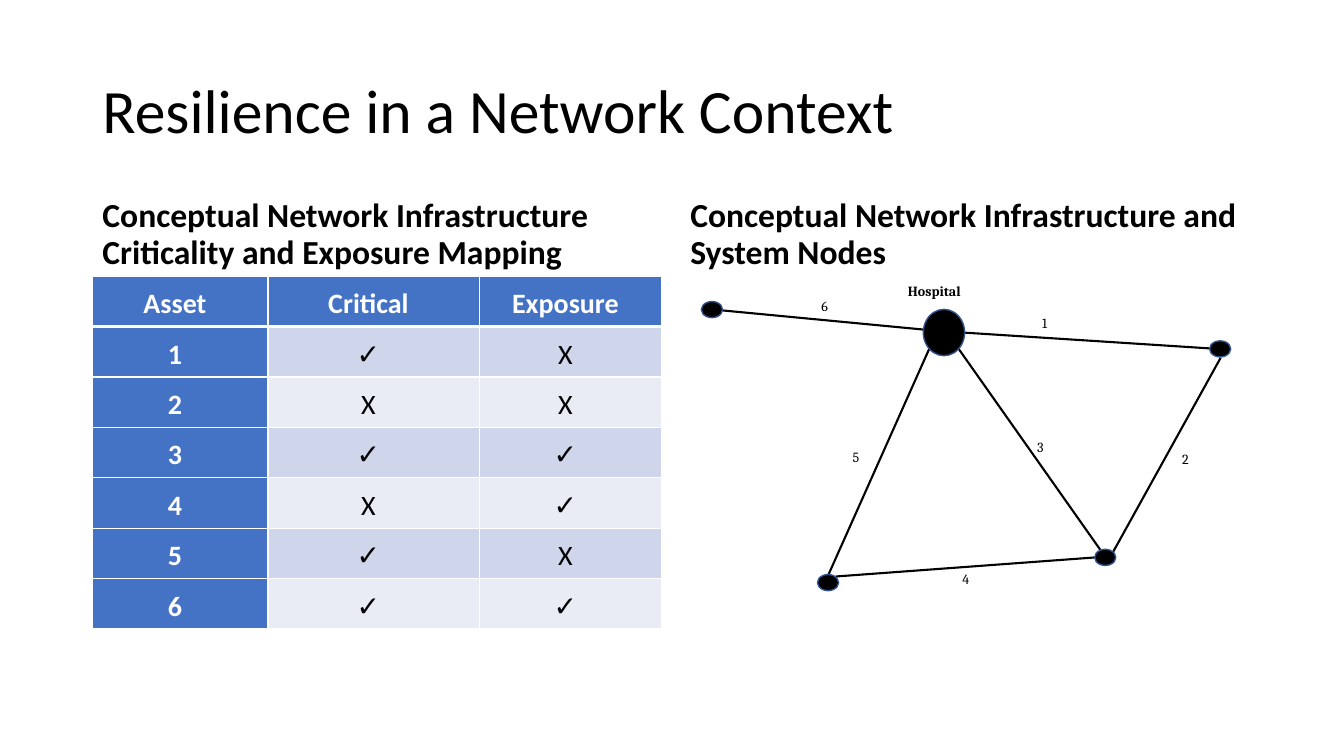
from dataclasses import dataclass

from lxml import etree
from pptx import Presentation
from pptx.dml.color import RGBColor
from pptx.enum.shapes import MSO_CONNECTOR, MSO_SHAPE
from pptx.enum.text import MSO_ANCHOR, PP_ALIGN
from pptx.oxml.ns import qn
from pptx.util import Pt

STRAIGHT = MSO_CONNECTOR.STRAIGHT
OVAL = MSO_SHAPE.OVAL
TOP, MIDDLE, BOTTOM = MSO_ANCHOR.TOP, MSO_ANCHOR.MIDDLE, MSO_ANCHOR.BOTTOM
CENTER = PP_ALIGN.CENTER


@dataclass(frozen=True)
class Theme:
    """Colours, fonts and type sizes of the slide."""
    ink: str = "000000"
    white: str = "FFFFFF"
    accent: str = "4472C4"
    outline: str = "325491"
    bands: tuple = ("CFD5EA", "E9EBF5")
    font: str = "Calibri"
    label_font: str = "Cambria"
    title: int = 44
    heading: int = 24
    cell: int = 20
    label: int = 10


class Deck:
    """Draws styled elements on the current slide."""

    def __init__(self, prs, theme):
        self.theme = theme
        self.s = prs.slides.add_slide(prs.slide_layouts[6])

    def run(self, p, text, size, bold=False, color=None, font=None):
        """Add one formatted run to a paragraph."""
        r = p.add_run()
        r.text = text
        r.font.size = Pt(size)
        r.font.bold = bold
        r.font.name = font or self.theme.font
        r.font.color.rgb = RGBColor.from_string(color or self.theme.ink)

    def text(self, box, text, size, bold=False, font=None, anchor=TOP,
             spacing=1.0, before=0):
        """Add a wrapped text box."""
        tf = self.s.shapes.add_textbox(*map(Pt, box)).text_frame
        tf.word_wrap = True
        tf.vertical_anchor = anchor
        p = tf.paragraphs[0]
        p.line_spacing = spacing
        p.space_before = Pt(before)
        self.run(p, text, size, bold, font=font)

    def label(self, x, y, text, width=26.6, bold=False):
        """Add a small diagram label."""
        self.text((x, y, width, 23.8), text, self.theme.label, bold,
                  self.theme.label_font)

    def line(self, start, end):
        """Add a straight network link."""
        sp = self.s.shapes.add_connector(STRAIGHT, *map(Pt, start + end))
        sp.line.width = Pt(1.5)
        sp.line.color.rgb = RGBColor.from_string(self.theme.ink)
        etree.SubElement(sp._element.spPr, qn("a:effectLst"))

    def node(self, x, y, w=15.1, h=11.5):
        """Add an elliptical network node."""
        sp = self.s.shapes.add_shape(OVAL, *map(Pt, (x, y, w, h)))
        sp.shadow.inherit = False
        sp.fill.solid()
        sp.fill.fore_color.rgb = RGBColor.from_string(self.theme.ink)
        sp.line.width = Pt(1)
        sp.line.color.rgb = RGBColor.from_string(self.theme.outline)

    def border(self, cell, side, width):
        """Add a white border to one side of a cell."""
        ln = etree.SubElement(cell._tc.get_or_add_tcPr(), qn(f"a:ln{side}"),
                              w=str(Pt(width)))
        fill = etree.SubElement(ln, qn("a:solidFill"))
        etree.SubElement(fill, qn("a:srgbClr"), val=self.theme.white)

    def cell(self, cell, text, row, col):
        """Fill and format one table cell."""
        t = self.theme
        head = row == 0 or col == 0
        cell.margin_left, cell.margin_right = Pt(0), Pt(7.6)
        cell.margin_top = cell.margin_bottom = Pt(2.9)
        for side in "LRTB":
            thick = (row, side) in ((0, "B"), (1, "T"))
            self.border(cell, side, 3 if thick else 1)
        cell.fill.solid()
        fill = t.accent if head else t.bands[(row - 1) % 2]
        cell.fill.fore_color.rgb = RGBColor.from_string(fill)
        p = cell.text_frame.paragraphs[0]
        p.alignment = CENTER
        p.line_spacing = 1.2
        self.run(p, text, t.cell, head, t.white if head else t.ink)

    def table(self, x, y, widths, row_height, rows):
        """Add a table with a header row and a header column."""
        table = self.s.shapes.add_table(
            len(rows), len(widths), Pt(x), Pt(y), Pt(sum(widths)),
            Pt(row_height * len(rows))).table
        table.first_row = table.horz_banding = False
        for column, width in zip(table.columns, widths):
            column.width = Pt(width)
        for i, values in enumerate(rows):
            table.rows[i].height = Pt(row_height)
            for j, value in enumerate(values):
                self.cell(table.cell(i, j), value, i, j)


ASSETS = [
    ("Asset", "Critical", "Exposure"),
    ("1", "✓", "X"),
    ("2", "X", "X"),
    ("3", "✓", "✓"),
    ("4", "X", "✓"),
    ("5", "✓", "X"),
    ("6", "✓", "✓"),
]
HEADINGS = [
    (66.1, 406.1, "Conceptual Network Infrastructure Criticality and Exposure Mapping"),
    (486, 408.2, "Conceptual Network Infrastructure and System Nodes"),
]
LINKS = [
    ("1", (689, 237.6), (867.6, 249.1), (737.3, 221)),
    ("2", (871.9, 255.6), (794.9, 394.6), (837.4, 318.2)),
    ("3", (684.7, 249.1), (789.8, 398.2), (733.7, 309.6)),
    ("4", (596.9, 411.8), (781.9, 398.2), (680.4, 403.9)),
    ("5", (591.8, 410.4), (663.8, 249.1), (601.9, 316.8)),
    ("6", (508.3, 221), (659.5, 235.4), (579.6, 208.8)),
]
NODES = [(501, 215.4), (864, 243.5), (781.9, 392.4), (583.9, 410.4)]


def main():
    """Build and save the slide."""
    prs = Presentation()
    prs.slide_width, prs.slide_height = Pt(960), Pt(540)
    theme = Theme()
    deck = Deck(prs, theme)
    deck.text((66.1, 28.8, 828, 104.4), "Resilience in a Network Context",
              theme.title, anchor=MIDDLE, spacing=0.9)
    for x, width, heading in HEADINGS:
        deck.text((x, 132.4, width, 64.9), heading, theme.heading, True,
                  anchor=BOTTOM, spacing=0.9, before=10)
    deck.table(66.1, 197.3, (125.3, 151.2, 130.3), 36, ASSETS)
    for _, start, end, _ in LINKS:
        deck.line(start, end)
    for x, y in NODES:
        deck.node(x, y)
    deck.node(659.5, 221, 29.5, 33.1)
    for name, _, _, (x, y) in LINKS:
        deck.label(x, y, name)
    deck.label(641.5, 198, "Hospital", 95.8, True)
    prs.save("out.pptx")


if __name__ == "__main__":
    main()
